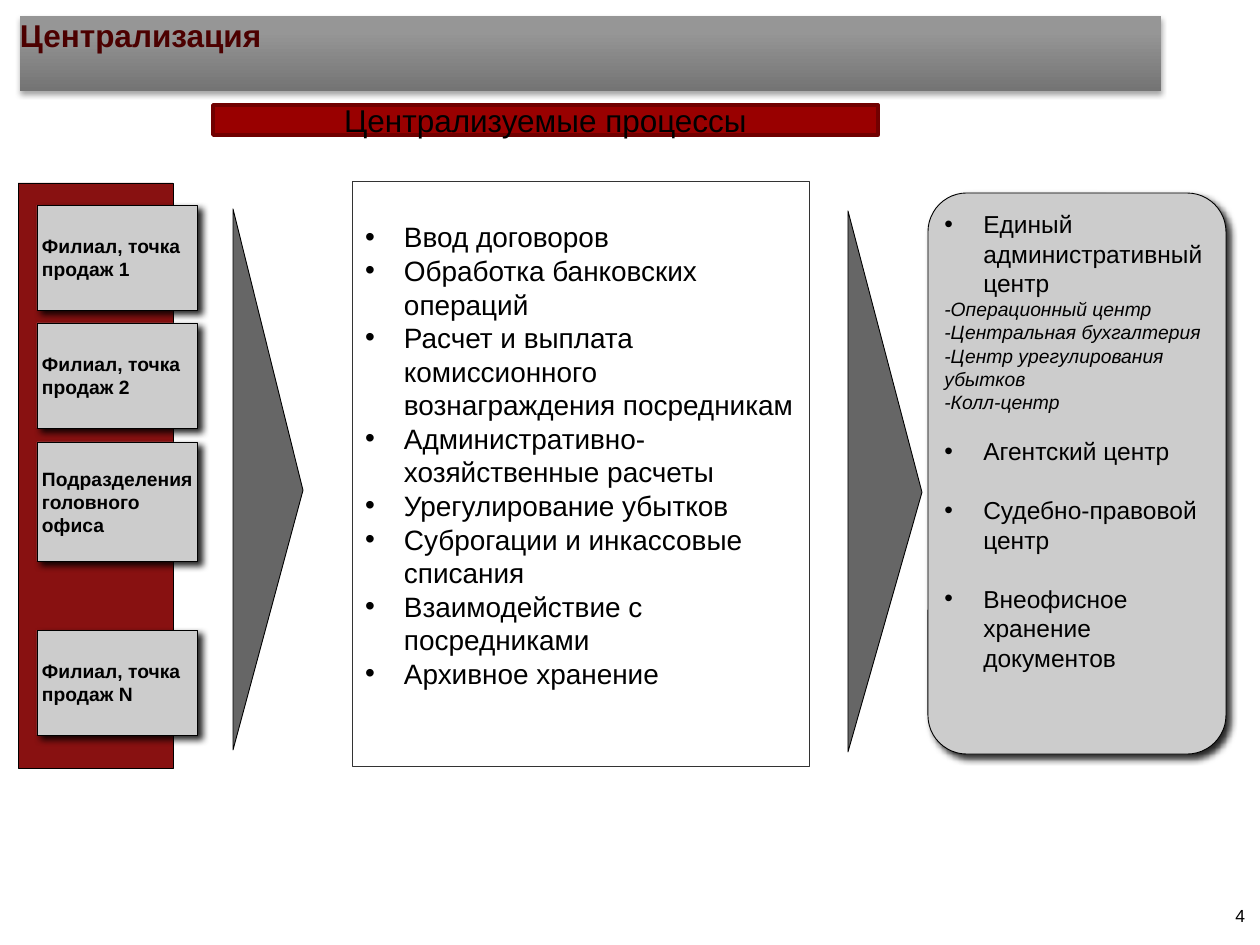
import dataclasses

import lxml.etree
import pptx
import pptx.dml.color
import pptx.enum.shapes
import pptx.enum.text
import pptx.oxml.ns
import pptx.util

PX = 914400 / 126
ALIGN = pptx.enum.text.PP_ALIGN
ANCHOR = pptx.enum.text.MSO_ANCHOR
SHAPE = pptx.enum.shapes.MSO_SHAPE


@dataclasses.dataclass(frozen=True)
class Theme:
    font: str = "Arial"
    text: str = "000000"
    title: str = "4C0000"
    title_dark: str = "747474"
    title_light: str = "969696"
    panel: str = "FFFFFF"
    panel_line: str = "333333"
    card: str = "CCCCCC"
    arrow: str = "666666"
    band: str = "881111"
    banner: str = "990000"
    banner_line: str = "710000"
    heading_size: int = 18
    process_size: int = 16
    center_size: int = 14
    small_size: int = 11
    number_size: int = 10
    title_shadow: tuple = (35, 3.1, 1.8, 90)
    card_shadow: tuple = (85, 4, 3, 45)


def px(value):
    return pptx.util.Emu(round(value * PX))


def rgb(value):
    return pptx.dml.color.RGBColor.from_string(value)


def add_child(parent, tag, **attributes):
    child = lxml.etree.SubElement(parent, pptx.oxml.ns.qn(tag))
    for name, value in attributes.items():
        child.set(name, str(value))
    return child


class SlideBuilder:
    def __init__(self, slide, theme):
        self.slide = slide
        self.theme = theme

    def place(self, shape, box):
        shape.left, shape.top, shape.width, shape.height = map(px, box)

    def paint(self, shape, fill, line=None, width=0.5):
        shape.fill.solid()
        shape.fill.fore_color.rgb = rgb(fill)
        shape.line.color.rgb = rgb(line or self.theme.text)
        shape.line.width = pptx.util.Pt(width)

    def shadow(self, shape, opacity, blur, distance, angle):
        shape.shadow.inherit = False
        effects = shape._element.spPr.find(pptx.oxml.ns.qn("a:effectLst"))
        outer = add_child(effects, "a:outerShdw", blurRad=pptx.util.Pt(blur),
                          dist=pptx.util.Pt(distance), dir=angle * 60000,
                          algn="tl", rotWithShape=0)
        color = add_child(outer, "a:srgbClr", val="000000")
        add_child(color, "a:alpha", val=opacity * 1000)

    def frame(self, shape, margins, anchor):
        frame = shape.text_frame
        frame.word_wrap = True
        frame.auto_size = pptx.enum.text.MSO_AUTO_SIZE.NONE
        frame.vertical_anchor = anchor
        (frame.margin_left, frame.margin_top,
         frame.margin_right, frame.margin_bottom) = map(px, margins)
        return frame

    def format(self, paragraph, size, color=None, bold=False, italic=False,
               align=ALIGN.LEFT, before=0):
        paragraph.alignment = align
        paragraph.space_before = pptx.util.Pt(before)
        for run in paragraph.runs:
            run.font.name = self.theme.font
            run.font.size = pptx.util.Pt(size)
            run.font.bold = bold
            run.font.italic = italic
            run.font.color.rgb = rgb(color or self.theme.text)

    def bullet(self, paragraph):
        properties = paragraph._p.get_or_add_pPr()
        properties.set("marL", str(px(39)))
        properties.set("indent", str(-px(39)))
        add_child(properties, "a:buFont", typeface=self.theme.font)
        add_child(properties, "a:buChar", char="•")

    def title(self, text, box):
        theme = self.theme
        shape = self.slide.shapes.title
        self.place(shape, box)
        shape.fill.gradient()
        shape.fill.gradient_angle = 90
        stops = shape.fill.gradient_stops
        for stop, position, color in zip(stops, (0, 0.8),
                                         (theme.title_dark, theme.title_light)):
            stop.position = position
            stop.color.rgb = rgb(color)
        self.shadow(shape, *theme.title_shadow)
        frame = self.frame(shape, (0, 0, 0, 0), ANCHOR.TOP)
        frame.text = text
        self.format(frame.paragraphs[0], theme.heading_size, theme.title, bold=True)

    def process_list(self, items, box):
        shape = self.slide.placeholders[1]
        self.place(shape, box)
        self.paint(shape, self.theme.panel, self.theme.panel_line)
        frame = self.frame(shape, (13, 6, 13, 43), ANCHOR.MIDDLE)
        frame.text = "\n".join(items)
        for paragraph in frame.paragraphs:
            self.bullet(paragraph)
            self.format(paragraph, self.theme.process_size)

    def block(self, kind, box, fill, line=None, width=0.5):
        shape = self.slide.shapes.add_shape(kind, *map(px, box))
        shape.shadow.inherit = False
        self.paint(shape, fill, line, width)
        return shape

    def banner(self, text, box):
        shape = self.block(SHAPE.RECTANGLE, box, self.theme.banner,
                           self.theme.banner_line, 2)
        frame = self.frame(shape, (13, 6, 13, 6), ANCHOR.MIDDLE)
        frame.text = text
        self.format(frame.paragraphs[0], self.theme.heading_size, align=ALIGN.CENTER)

    def card(self, text, box):
        shape = self.block(SHAPE.RECTANGLE, box, self.theme.card)
        self.shadow(shape, *self.theme.card_shadow)
        frame = self.frame(shape, (5, 6, 1, 6), ANCHOR.MIDDLE)
        frame.text = text
        self.format(frame.paragraphs[0], self.theme.small_size, bold=True)

    def arrow(self, left, top, width, height):
        offset = (height - width) / 2
        box = (left - offset, top + offset, height, width)
        shape = self.block(SHAPE.ISOSCELES_TRIANGLE, box, self.theme.arrow)
        shape.adjustments[0] = 0.52
        shape.rotation = 90

    def center_list(self, items, box):
        theme = self.theme
        shape = self.block(SHAPE.ROUNDED_RECTANGLE, box, theme.card)
        shape.adjustments[0] = 0.13
        self.shadow(shape, *theme.card_shadow)
        frame = self.frame(shape, (5, 5, 5, 5), ANCHOR.TOP)
        frame.text = "\n".join(text for text, before in items)
        for paragraph, (text, before) in zip(frame.paragraphs, items):
            detail = text.startswith("-")
            if not detail:
                self.bullet(paragraph)
            size = theme.small_size if detail else theme.center_size
            self.format(paragraph, size, italic=detail, before=before)

    def slide_number(self, text, box):
        shape = self.slide.shapes.add_textbox(*map(px, box))
        frame = self.frame(shape, (0, 0, 0, 0), ANCHOR.BOTTOM)
        frame.text = text
        self.format(frame.paragraphs[0], self.theme.number_size, align=ALIGN.RIGHT)


PROCESSES = (
    "Ввод договоров",
    "Обработка банковских операций",
    "Расчет и выплата комиссионного вознаграждения посредникам",
    "Административно-хозяйственные расчеты",
    "Урегулирование убытков",
    "Суброгации и инкассовые списания",
    "Взаимодействие с посредниками",
    "Архивное хранение",
)
CENTERS = (
    ("Единый административный центр", 0),
    ("-Операционный центр", 0),
    ("-Центральная бухгалтерия", 0),
    ("-Центр урегулирования убытков", 0),
    ("-Колл-центр", 0),
    ("Агентский центр", 13),
    ("Судебно-правовой центр", 17),
    ("Внеофисное хранение документов", 17),
)
BRANCHES = (
    ("Филиал, точка продаж 1", 205, 105),
    ("Филиал, точка продаж 2", 323, 105),
    ("Подразделения головного офиса", 442, 119),
    ("Филиал, точка продаж N", 630, 105),
)


def main():
    presentation = pptx.Presentation()
    presentation.slide_width, presentation.slide_height = px(1260), px(945)
    slide = presentation.slides.add_slide(presentation.slide_layouts[1])
    theme = Theme()
    builder = SlideBuilder(slide, theme)
    builder.title("Централизация", (20, 16, 1141, 75))
    builder.banner("Централизуемые процессы", (213, 105, 665, 30))
    builder.block(SHAPE.RECTANGLE, (18, 183, 155, 585), theme.band)
    for text, top, height in BRANCHES:
        builder.card(text, (37, top, 161, height))
    builder.arrow(233, 209, 70, 541)
    builder.process_list(PROCESSES, (352, 181, 457, 585))
    builder.arrow(848, 211, 74, 541)
    builder.center_list(CENTERS, (928, 193, 298, 561))
    builder.slide_number("4", (1171, 904, 74, 22))
    presentation.save("out.pptx")


if __name__ == "__main__":
    main()
